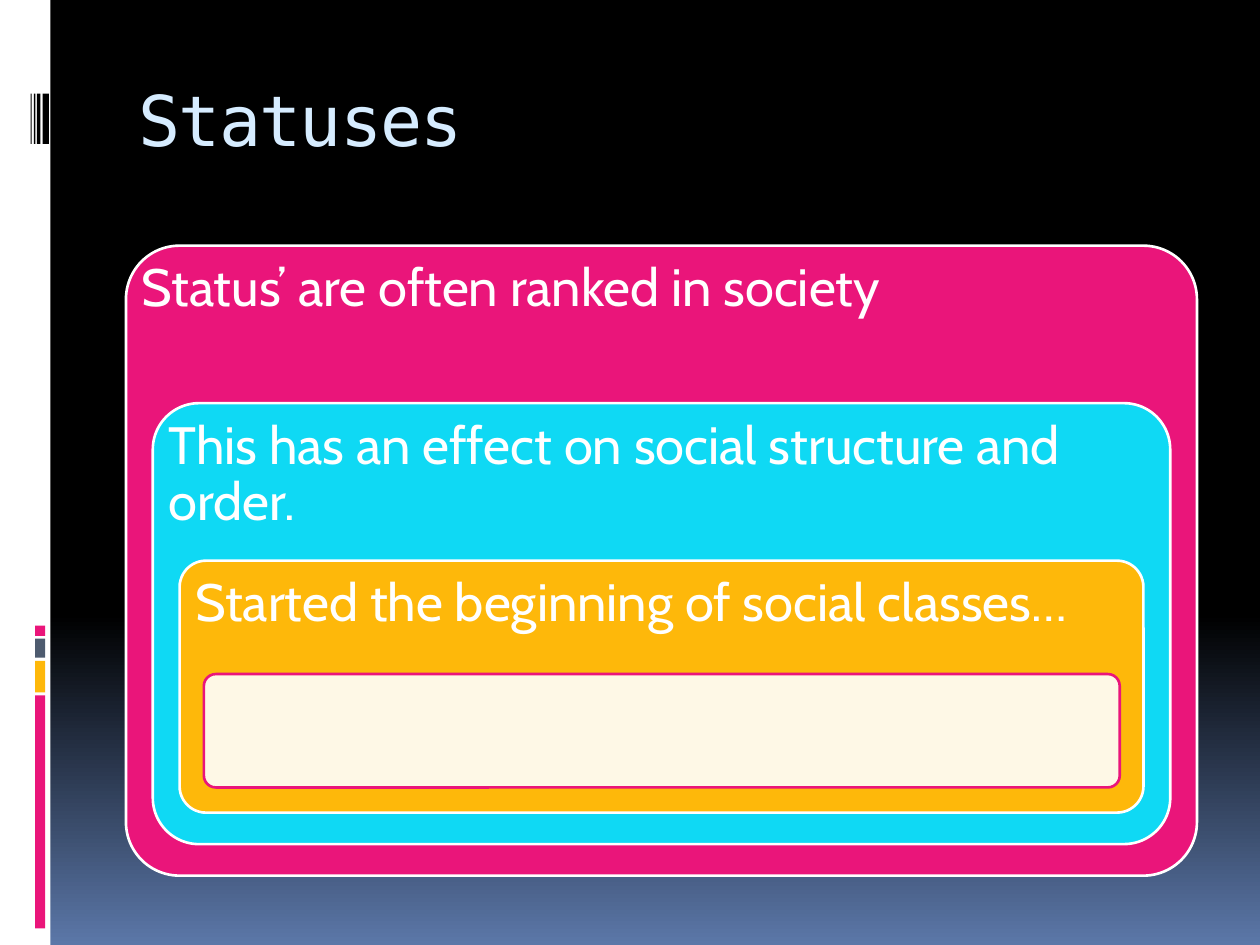
import copy
import pptx
import pptx.util
import pptx.dml.color
import pptx.enum.shapes
import pptx.enum.text
import pptx.oxml.ns

Pt = pptx.util.Pt
SHAPE = pptx.enum.shapes.MSO_SHAPE
PINK, CYAN, GOLD, SLATE = "EA157A", "0FD9F4", "FEB80A", "4E5B6F"
BLACK, WHITE = "000000", "FFFFFF"


def paint(color, code):
    color.rgb = pptx.dml.color.RGBColor.from_string(code)


def block(slide, box, fill, line=None, round=None):
    kind = SHAPE.RECTANGLE if round is None else SHAPE.ROUNDED_RECTANGLE
    shape = slide.shapes.add_shape(kind, *map(Pt, box))
    shape.shadow.inherit = False
    shape.fill.solid()
    paint(shape.fill.fore_color, fill)
    if round is not None:
        shape.adjustments[0] = round
    if line:
        paint(shape.line.color, line)
        shape.line.width = Pt(1.5)
    else:
        shape.line.fill.background()
    return shape


def label(slide, box, text, size, inset, color=WHITE, font="Cabin", space=0.9):
    """Add a text box; inset is (side, top)."""
    frame = slide.shapes.add_textbox(*map(Pt, box)).text_frame
    frame.word_wrap = True
    frame.vertical_anchor = pptx.enum.text.MSO_ANCHOR.TOP
    frame.margin_left = frame.margin_right = Pt(inset[0])
    frame.margin_top = frame.margin_bottom = Pt(inset[1])
    para = frame.paragraphs[0]
    para.line_spacing = space
    run = para.add_run()
    run.text = text
    run.font.size = Pt(size)
    run.font.name = font
    paint(run.font.color, color)
    return run


def back(slide):
    fill = slide.background.fill
    fill.gradient()
    fill.gradient_angle = 270
    first = next(slide.element.iter(pptx.oxml.ns.qn("a:gs")))
    first.addnext(copy.deepcopy(first))
    stops = [(0, BLACK), (0.65, BLACK), (1, "5B77A8")]
    for stop, (place, code) in zip(fill.gradient_stops, stops):
        stop.position = place
        paint(stop.color, code)


def side(slide, box):
    left, top, width, height = box
    block(slide, box, WHITE)
    # Coloured bars
    for drop, tall, fill in [(397.4, 133.2, PINK), (377.7, 18, GOLD),
                             (365, 10.8, SLATE), (357.5, 5.8, PINK)]:
        block(slide, (left + 20, top + drop, 5.8, tall), fill)
    # Thin black stripes
    for shift, wide in [(24.4, 3.6), (21.1, 2), (19.4, 0.9), (17.5, 0.6)]:
        block(slide, (left + shift, top + 53.5, wide, 28.8), BLACK)


def head(slide, box):
    run = label(slide, box, "Statuses", 40, (7.2, 3.4), "D6ECFF",
                "DejaVu Sans Mono", 1)
    run.font._element.set("spc", "-100")


def nest(slide, box):
    left, top, width, height = box
    step, drop = 15.3, 90
    levels = [
        ("Status’ are often ranked in society", PINK, 0.085),
        ("This has an effect on social structure and order.", CYAN, 0.105),
        ("Started the beginning of social classes…", GOLD, 0.105),
    ]
    # Each level sits inside the one before
    for i, (text, fill, round) in enumerate(levels):
        part = (left + step * i, top + drop * i,
                width - 2 * step * i, height - 108 * i)
        block(slide, part, fill, WHITE, round)
        label(slide, part, text, 30, (9, 9))
    # Pale core
    core = (left + 44.5, top + 244.8, width - 88.6, 64.8)
    shape = block(slide, core, WHITE, PINK, 0.105)
    tint = next(shape.fill._xPr.iter(pptx.oxml.ns.qn("a:srgbClr")))
    alpha = tint.makeelement(pptx.oxml.ns.qn("a:alpha"), {"val": "90000"})
    tint.append(alpha)


def main():
    deck = pptx.Presentation()
    deck.slide_width, deck.slide_height = Pt(720), Pt(540)
    slide = deck.slides.add_slide(deck.slide_layouts[6])
    back(slide)
    side(slide, (0, 0, 28.8, 540))
    head(slide, (72, 40.3, 612, 72))
    nest(slide, (72, 140.4, 612, 360))
    deck.save("out.pptx")


if __name__ == "__main__":
    main()
